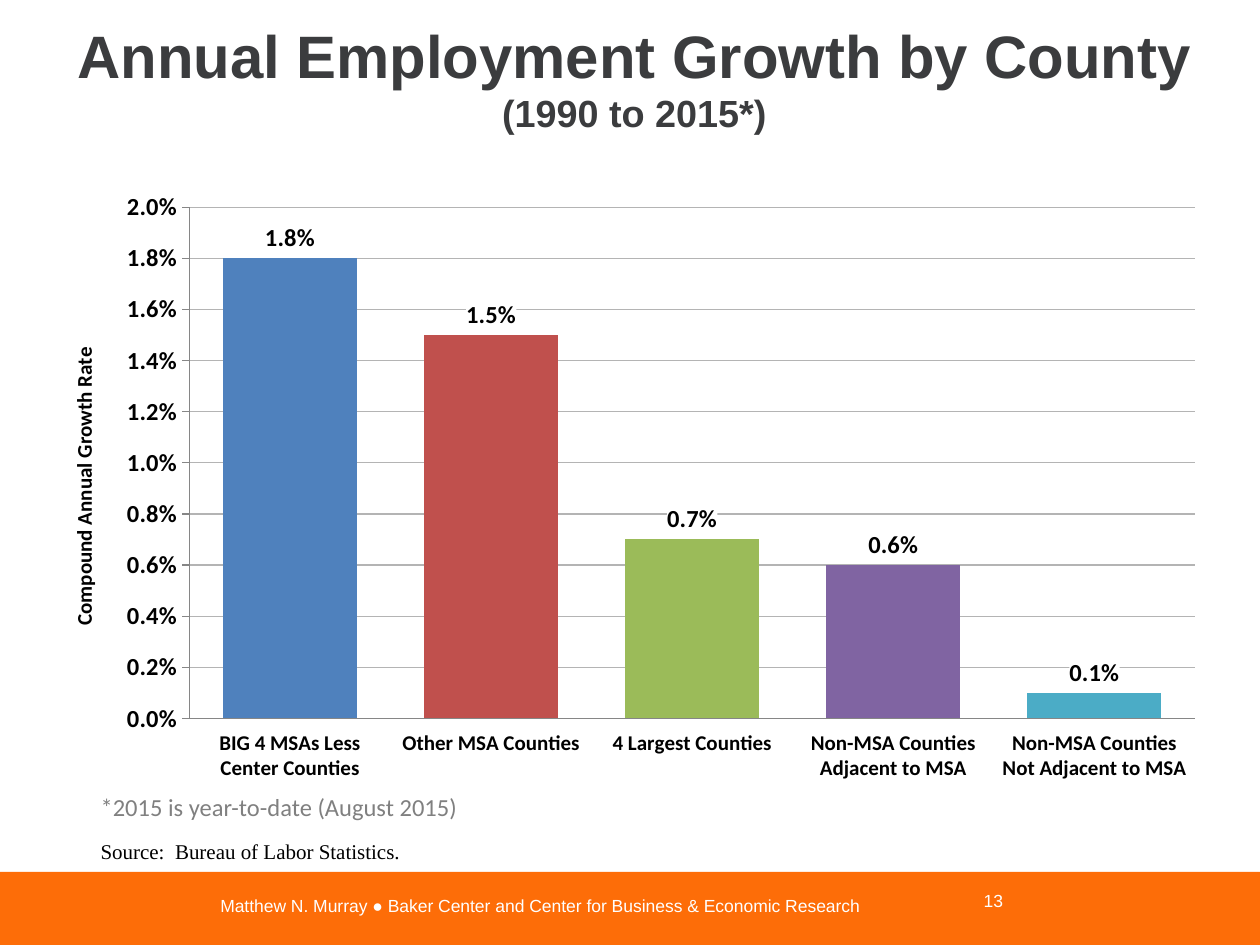
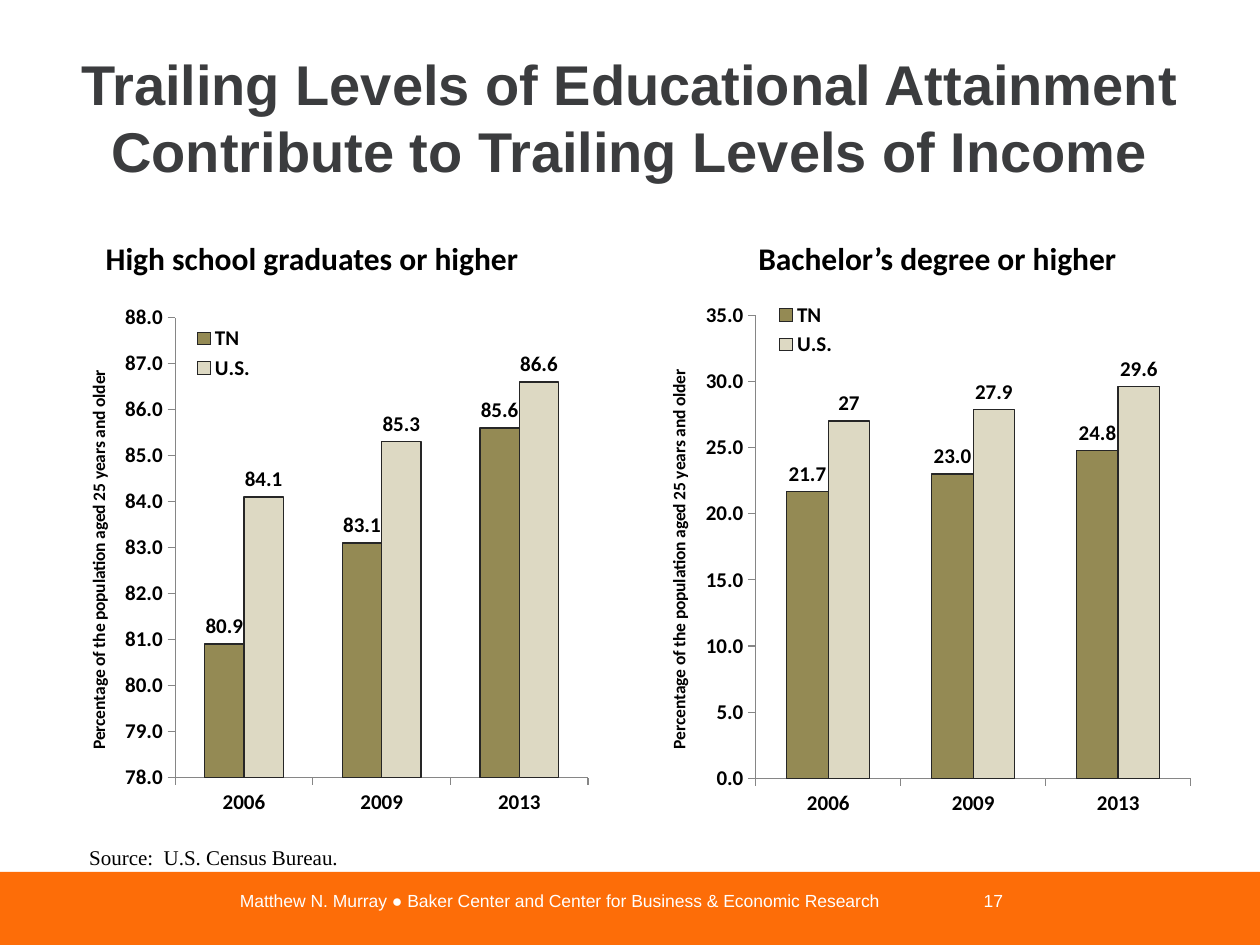
from dataclasses import dataclass
from typing import Optional

from lxml.etree import SubElement
from pptx import Presentation
from pptx.chart.data import CategoryChartData
from pptx.dml.color import RGBColor
from pptx.enum.chart import (XL_CHART_TYPE, XL_LABEL_POSITION, XL_LEGEND_POSITION,
                             XL_TICK_LABEL_POSITION, XL_TICK_MARK)
from pptx.enum.shapes import MSO_SHAPE
from pptx.enum.text import MSO_ANCHOR, MSO_AUTO_SIZE, PP_ALIGN
from pptx.oxml import parse_xml
from pptx.oxml.ns import nsdecls, qn
from pptx.util import Inches, Pt

COLORS = {
    "band": "FD6D08", "title": "3B3C3E", "white": "FFFFFF", "black": "000000",
    "note": "808080", "grid": "B4B4B4", "axis": "868686", "outline": "262626",
    "tn": "948A54", "us": "DDD9C3",
}
COUNTY_COLORS = ["4F81BD", "C0504D", "9BBB59", "8064A2", "4BACC6"]
FOOTER = "Matthew N. Murray ● Baker Center and Center for Business & Economic Research"


@dataclass
class Box:
    left: float
    top: float
    width: float
    height: float

    def emu(self) -> tuple:
        return tuple(Inches(v) for v in (self.left, self.top, self.width, self.height))


@dataclass
class TextStyle:
    face: str
    size: float
    color: str
    bold: bool = False
    align: PP_ALIGN = PP_ALIGN.LEFT
    anchor: MSO_ANCHOR = MSO_ANCHOR.TOP


@dataclass
class Axis:
    title: str
    low: float
    high: float
    step: float
    number_format: str
    title_size: float
    label_size: float


@dataclass
class Series:
    name: str
    values: list
    label_format: str
    color: Optional[str] = None


@dataclass
class ColumnChart:
    box: Box
    plot: Box  # fractions of the chart area
    categories: list
    series: list
    axis: Axis
    gap: int
    label_size: float


FOOTER_STYLE = TextStyle("Arial", 10, "white", align=PP_ALIGN.CENTER, anchor=MSO_ANCHOR.MIDDLE)
NUMBER_STYLE = TextStyle("Arial", 10, "white", align=PP_ALIGN.RIGHT, anchor=MSO_ANCHOR.MIDDLE)
HEADING_STYLE = TextStyle("Calibri", 18, "black", bold=True)
NOTE_STYLE = TextStyle("Calibri", 14, "note")
SOURCE_STYLE = TextStyle("Times New Roman", 12, "black")
TITLE_STYLE = TextStyle("Arial", 32, "title", True, PP_ALIGN.CENTER, MSO_ANCHOR.MIDDLE)


def rgb(name: str) -> RGBColor:
    return RGBColor.from_string(COLORS.get(name, name))


def style_frame(frame, style: TextStyle) -> None:
    frame.word_wrap = True
    frame.auto_size = MSO_AUTO_SIZE.NONE
    frame.vertical_anchor = style.anchor
    paragraph = frame.paragraphs[0]
    paragraph.alignment = style.align
    font = paragraph.font
    font.name, font.size, font.bold = style.face, Pt(style.size), style.bold
    font.color.rgb = rgb(style.color)


def add_text(slide, text: str, box: Box, style: TextStyle) -> None:
    frame = slide.shapes.add_textbox(*box.emu()).text_frame
    frame.text = text
    style_frame(frame, style)


def add_framed_slide(deck, title_runs: list, title_box: Box, footer_box: Box, number: int):
    """Add a slide with its title, bottom band, footer and slide number."""
    slide = deck.slides.add_slide(deck.slide_layouts[5])
    band = slide.shapes.add_shape(MSO_SHAPE.RECTANGLE, *Box(0, 6.92, 10, 0.58).emu())
    band.shadow.inherit = False
    band.fill.solid()
    band.fill.fore_color.rgb = rgb("band")
    band.line.fill.background()

    title = slide.shapes.title
    title.left, title.top, title.width, title.height = title_box.emu()
    for text, size in title_runs:
        run = title.text_frame.paragraphs[0].add_run()
        run.text = text
        run.font.size = Pt(size)
    style_frame(title.text_frame, TITLE_STYLE)

    add_text(slide, FOOTER, footer_box, FOOTER_STYLE)
    add_text(slide, str(number), Box(7.66, 6.95, 0.4, 0.4), NUMBER_STYLE)
    return slide


def manual_layout(area: Box, inner: bool = False):
    """Build a chart layout element from fractions of the chart area."""
    layout = parse_xml(f"<c:layout {nsdecls('c')}><c:manualLayout/></c:layout>")
    settings = {"layoutTarget": "inner"} if inner else {}
    settings |= {"xMode": "edge", "yMode": "edge", "x": area.left, "y": area.top,
                 "w": area.width, "h": area.height}
    for tag, value in settings.items():
        SubElement(layout[0], qn(f"c:{tag}")).set("val", str(value))
    return layout


def drop_layout(parent) -> None:
    for old in parent.findall(qn("c:layout")):
        parent.remove(old)


def style_value_axis(value_axis, axis: Axis) -> None:
    value_axis.minimum_scale, value_axis.maximum_scale = axis.low, axis.high
    value_axis.major_unit = axis.step
    value_axis.has_major_gridlines = False
    value_axis.tick_labels.number_format = axis.number_format
    value_axis.tick_labels.number_format_is_linked = False
    frame = value_axis.axis_title.text_frame
    frame.text = axis.title
    frame._txBody.bodyPr.set("rot", "-5400000")
    font = frame.paragraphs[0].font
    font.name, font.size, font.bold = "Calibri", Pt(axis.title_size), True
    font.color.rgb = rgb("black")


def add_column_chart(slide, spec_: ColumnChart):
    data = CategoryChartData()
    data.categories = spec_.categories
    for item in spec_.series:
        data.add_series(item.name, item.values)
    chart = slide.shapes.add_chart(
        XL_CHART_TYPE.COLUMN_CLUSTERED, *spec_.box.emu(), data).chart
    chart.has_title = chart.has_legend = False
    chart.font.name, chart.font.size = "Calibri", Pt(spec_.label_size)
    chart.font.color.rgb = rgb("black")
    plot_area = chart._chartSpace.chart.plotArea
    drop_layout(plot_area)
    plot_area.insert(0, manual_layout(spec_.plot, inner=True))

    style_value_axis(chart.value_axis, spec_.axis)
    for axis in (chart.category_axis, chart.value_axis):
        axis.major_tick_mark, axis.minor_tick_mark = XL_TICK_MARK.OUTSIDE, XL_TICK_MARK.NONE
        axis.format.line.color.rgb = rgb("axis")
        axis.tick_labels.font.bold = True
    chart.category_axis.tick_labels.font.size = Pt(12)
    chart.value_axis.tick_labels.font.size = Pt(spec_.axis.label_size)

    plot = chart.plots[0]
    plot.vary_by_categories = False
    plot.gap_width, plot.overlap = spec_.gap, 0
    for columns, item in zip(plot.series, spec_.series):
        if item.color:
            columns.format.fill.solid()
            columns.format.fill.fore_color.rgb = rgb(item.color)
            columns.format.line.color.rgb = rgb("outline")
            columns.format.line.width = Pt(0.75)
        labels = columns.data_labels
        labels.show_value = True
        labels.position = XL_LABEL_POSITION.OUTSIDE_END
        labels.number_format, labels.number_format_is_linked = item.label_format, False
        labels.font.size, labels.font.bold = Pt(spec_.label_size), True
    return chart


def add_legend(chart, area: Box) -> None:
    chart.has_legend = True
    legend = chart.legend
    legend.position = XL_LEGEND_POSITION.RIGHT
    legend.include_in_layout = True
    legend.font.size, legend.font.bold = Pt(12), True
    drop_layout(legend._element)
    legend._element.find(qn("c:overlay")).addprevious(manual_layout(area))


def add_employment_slide(deck) -> None:
    slide = add_framed_slide(
        deck, [("Annual Employment Growth by County ", 34.2), ("(1990 to 2015*)", 21.6)],
        Box(0.41, 0.07, 9.25, 1.08), Box(0.7, 6.99, 7.17, 0.4), 13)
    chart = add_column_chart(slide, ColumnChart(
        Box(0.39, 1.4, 9.28, 4.89), Box(0.12, 0.05, 0.86, 0.83),
        ["BIG 4 MSAs Less Center Counties", "Other MSA Counties", "4 Largest Counties",
         "Non-MSA Counties Adjacent to MSA", "Non-MSA Counties Not Adjacent to MSA"],
        [Series("Series 1", [0.018, 0.015, 0.007, 0.006, 0.001], "0.0%")],
        Axis("Compound Annual Growth Rate", 0, 0.02, 0.002, "0.0%", 12, 14),
        gap=50, label_size=14))
    chart.category_axis.major_tick_mark = XL_TICK_MARK.NONE
    chart.category_axis.tick_label_position = XL_TICK_LABEL_POSITION.LOW
    gridlines = chart.value_axis.major_gridlines.format.line
    gridlines.color.rgb, gridlines.width = rgb("grid"), Pt(0.75)

    growth = chart.plots[0].series[0]
    for index, color in enumerate(COUNTY_COLORS):
        fill = growth.points[index].format.fill
        fill.solid()
        fill.fore_color.rgb = rgb(color)
    # White label backgrounds keep the gridlines from crossing the numbers
    growth.data_labels._element.find(qn("c:txPr")).addprevious(parse_xml(
        f"<c:spPr {nsdecls('c', 'a')}><a:solidFill>"
        f"<a:srgbClr val=\"{COLORS['white']}\"/></a:solidFill></c:spPr>"))

    add_text(slide, "*2015 is year-to-date (August 2015)", Box(0.7, 6.24, 3.18, 0.34), NOTE_STYLE)
    add_text(slide, "Source:  Bureau of Labor Statistics.", Box(0.7, 6.61, 6.17, 0.3), SOURCE_STYLE)


def add_education_slide(deck) -> None:
    slide = add_framed_slide(
        deck, [("Trailing Levels of Educational Attainment "
                "Contribute to Trailing Levels of Income", 32)],
        Box(0.5, 0.3, 9, 1.25), Box(1.32, 6.95, 6.24, 0.4), 17)
    panels = [
        ("High school graduates or higher", Box(0.74, 1.85, 3.75, 0.4),
         Box(0.47, 2.34, 4.28, 4.22), Box(0.215, 0.043, 0.766, 0.865),
         Box(0.23, 0.05, 0.15, 0.12), (78, 88, 1),
         [80.9, 83.1, 85.6], [84.1, 85.3, 86.6], "General"),
        ("Bachelor’s degree or higher", Box(5.92, 1.85, 3.3, 0.4),
         Box(5.08, 2.32, 4.46, 4.24), Box(0.206, 0.043, 0.774, 0.867),
         Box(0.22, 0.01, 0.15, 0.12), (0, 35, 5),
         [21.7, 23, 24.8], [27, 27.9, 29.6], "0.0"),
    ]
    for heading, heading_box, box, plot, legend, scale, tn, us, tn_format in panels:
        chart = add_column_chart(slide, ColumnChart(
            box, plot, ["2006", "2009", "2013"],
            [Series("TN", tn, tn_format, "tn"), Series("U.S.", us, "General", "us")],
            Axis("Percentage of the population aged 25 years and older",
                 *scale, "#,##0.0", 10, 12),
            gap=150, label_size=12))
        add_legend(chart, legend)
        add_text(slide, heading, heading_box, HEADING_STYLE)
    add_text(slide, "Source:  U.S. Census Bureau.", Box(0.61, 6.65, 5.13, 0.3), SOURCE_STYLE)


def main() -> None:
    deck = Presentation()
    deck.slide_width, deck.slide_height = Inches(10), Inches(7.5)
    add_employment_slide(deck)
    add_education_slide(deck)
    deck.save("out.pptx")


if __name__ == "__main__":
    main()
